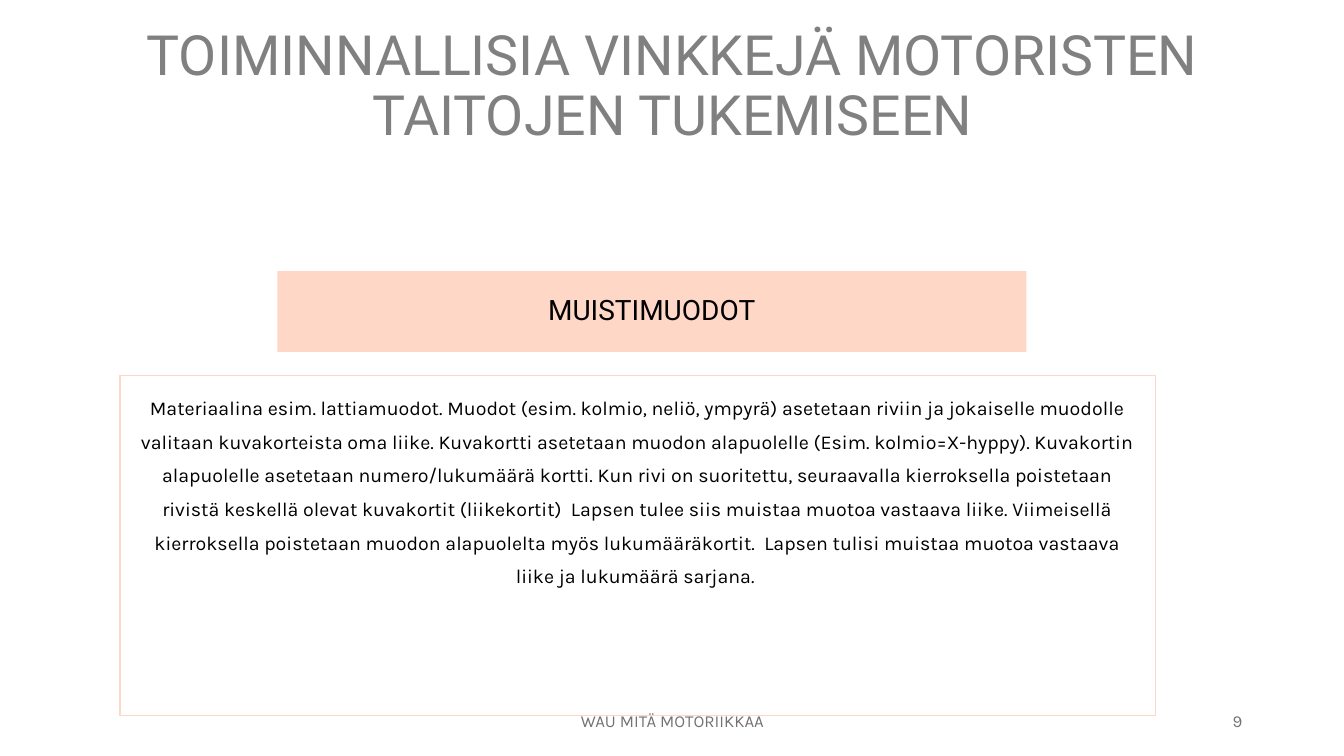
from pptx import Presentation
from pptx.dml.color import RGBColor
from pptx.enum.text import MSO_ANCHOR, MSO_AUTO_SIZE, PP_ALIGN
from pptx.util import Inches, Pt

TITLE = "TOIMINNALLISIA VINKKEJÄ MOTORISTEN TAITOJEN TUKEMISEEN"
HEADING = "MUISTIMUODOT"
BODY = (
    "Materiaalina esim. lattiamuodot. Muodot (esim. kolmio, neliö, ympyrä) "
    "asetetaan riviin ja jokaiselle muodolle valitaan kuvakorteista oma liike. "
    "Kuvakortti asetetaan muodon alapuolelle (Esim. kolmio=X-hyppy). "
    "Kuvakortin alapuolelle asetetaan numero/lukumäärä kortti. "
    "Kun rivi on suoritettu, seuraavalla kierroksella poistetaan rivistä "
    "keskellä olevat kuvakortit (liikekortit)  Lapsen tulee siis muistaa "
    "muotoa vastaava liike. Viimeisellä kierroksella poistetaan muodon "
    "alapuolelta myös lukumääräkortit.  Lapsen tulisi muistaa muotoa vastaava "
    "liike ja lukumäärä sarjana. "
)
FOOTER = "WAU MITÄ MOTORIIKKAA"
PAGE_NUMBER = "9"

PEACH = RGBColor(0xFF, 0xD7, 0xC7)
BLACK = RGBColor(0x00, 0x00, 0x00)
TITLE_GREY = RGBColor(0x80, 0x80, 0x80)
FOOTER_GREY = RGBColor(0x76, 0x71, 0x71)
CENTER, RIGHT = PP_ALIGN.CENTER, PP_ALIGN.RIGHT
TOP, MIDDLE, BOTTOM = MSO_ANCHOR.TOP, MSO_ANCHOR.MIDDLE, MSO_ANCHOR.BOTTOM
NO_FIT = MSO_AUTO_SIZE.NONE
COMPARISON_LAYOUT = 4


def place(box, area):
    box.left, box.top, box.width, box.height = (Inches(value) for value in area)


def write(box, text, size, font, color, align=CENTER, anchor=MIDDLE,
          spacing=1.0, before=0, insets=(0.1, 0.05, 0.1, 0.05)):
    frame = box.text_frame
    frame.word_wrap = True
    frame.auto_size = NO_FIT
    frame.vertical_anchor = anchor
    (frame.margin_left, frame.margin_top,
     frame.margin_right, frame.margin_bottom) = (Inches(value) for value in insets)
    para = frame.paragraphs[0]
    para.alignment = align
    para.line_spacing = spacing
    para.space_before = Pt(before)
    span = para.add_run()
    span.text = text
    span.font.size = Pt(size)
    span.font.name = font
    span.font.bold = False
    span.font.color.rgb = color


def main():
    deck = Presentation()
    deck.slide_width, deck.slide_height = Inches(13.33), Inches(7.5)
    page = deck.slides.add_slide(deck.slide_layouts[COMPARISON_LAYOUT])
    holders = {holder.placeholder_format.idx: holder for holder in page.placeholders}
    title, heading, body = holders[0], holders[1], holders[3]
    for unused in (holders[2], holders[4]):
        unused.element.getparent().remove(unused.element)

    place(title, (0.92, 0.4, 11.5, 1.16))
    write(title, TITLE, 39.6, "Roboto", TITLE_GREY, anchor=BOTTOM,
          spacing=0.9, insets=(0.1, 0.05, 0.1, 0.1))

    place(heading, (2.75, 2.69, 7.43, 0.8))
    heading.fill.solid()
    heading.fill.fore_color.rgb = PEACH
    write(heading, HEADING, 20, "Roboto", BLACK, spacing=0.9, before=10)

    place(body, (1.19, 3.73, 10.27, 3.37))
    body.line.color.rgb = PEACH
    body.line.width = Pt(0.75)
    write(body, BODY, 14, "Karla", BLACK, anchor=TOP,
          spacing=Pt(24), insets=(0.2, 0.1, 0.2, 0.05))

    for text, left, width, align in ((FOOTER, 4.42, 4.5, CENTER),
                                     (PAGE_NUMBER, 9.42, 3, RIGHT)):
        box = page.shapes.add_textbox(Inches(left), Inches(6.95),
                                      Inches(width), Inches(0.4))
        write(box, text, 12, "Karla", FOOTER_GREY, align=align)

    deck.save("out.pptx")


if __name__ == "__main__":
    main()
